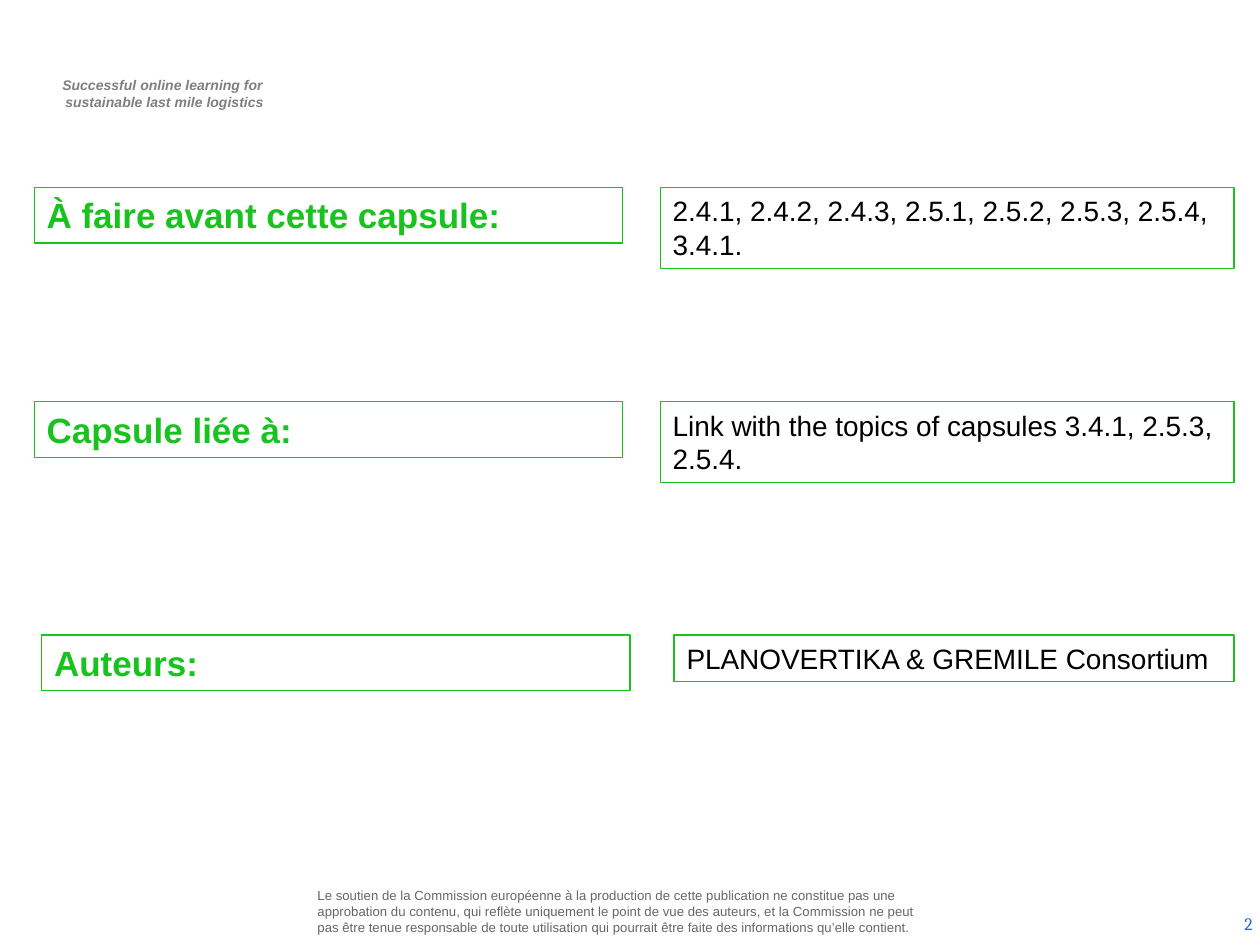
import pptx
import pptx.util
import pptx.dml.color
import pptx.enum.shapes
import pptx.enum.text

Cm, Pt = pptx.util.Cm, pptx.util.Pt
RGB = pptx.dml.color.RGBColor.from_string
ALIGN = pptx.enum.text.PP_ALIGN
ANCHOR = pptx.enum.text.MSO_ANCHOR
FIT = pptx.enum.text.MSO_AUTO_SIZE

# Colours and type styles
THEME = {
    "paper": RGB("FFFFFF"),
    "frame": RGB("18C320"),
    "tagline": {"name": "Arial", "size": Pt(8), "bold": True, "italic": True, "color": RGB("7F7F7F")},
    "disclaimer": {"name": "Arial", "size": Pt(7.5), "color": RGB("666666")},
    "page": {"name": "Cambria", "size": Pt(10), "color": RGB("3366CC")},
    "label": {"name": "Arial", "size": Pt(20), "bold": True, "color": RGB("18C320")},
    "answer": {"name": "Arial", "size": Pt(16), "color": RGB("000000")},
}


def write(holder, lines, style, align=ALIGN.LEFT, anchor=ANCHOR.TOP, fit=FIT.NONE, inset=(0.25, 0.13)):
    frame = holder.text_frame
    across, down = map(Cm, inset)
    layout = {"word_wrap": True, "auto_size": fit, "vertical_anchor": anchor,
              "margin_left": across, "margin_right": across,
              "margin_top": down, "margin_bottom": down}
    for key, value in layout.items():
        setattr(frame, key, value)
    frame.text = "\n".join(lines)
    for paragraph in frame.paragraphs:
        paragraph.alignment = align
        for run in paragraph.runs:
            for key, value in THEME[style].items():
                if key == "color":
                    run.font.color.rgb = value
                else:
                    setattr(run.font, key, value)


def framed(text, style, left, top, width, height):
    box = slide.shapes.add_shape(pptx.enum.shapes.MSO_SHAPE.RECTANGLE,
                                 Cm(left), Cm(top), Cm(width), Cm(height))
    box.shadow.inherit = False
    box.fill.solid()
    box.fill.fore_color.rgb = THEME["paper"]
    box.line.color.rgb = THEME["frame"]
    box.line.width = Pt(0.75)
    write(box, [text], style, fit=FIT.SHAPE_TO_FIT_TEXT)


deck = pptx.Presentation()
deck.slide_width, deck.slide_height = Cm(25.4), Cm(19.05)
slide = deck.slides.add_slide(deck.slide_layouts[6])

# Project tagline
tagline = slide.shapes.add_textbox(Cm(0.74), Cm(1.42), Cm(5.16), Cm(0.94))
write(tagline, ["Successful online learning for ", "sustainable last mile logistics"],
      "tagline", align=ALIGN.CENTER, fit=FIT.SHAPE_TO_FIT_TEXT)

# Funding disclaimer
disclaimer = slide.shapes.add_textbox(Cm(6.3), Cm(17.86), Cm(12.52), Cm(1.02))
write(disclaimer, [
    "Le soutien de la Commission européenne à la production de cette publication "
    "ne constitue pas une approbation du contenu, qui reflète uniquement le point "
    "de vue des auteurs, et la Commission ne peut pas être tenue responsable de "
    "toute utilisation qui pourrait être faite des informations qu’elle contient."],
    "disclaimer", anchor=ANCHOR.MIDDLE, inset=(0.1, 0.1))

# Page number
page_number = slide.shapes.add_textbox(Cm(19.58), Cm(18.11), Cm(5.92), Cm(1.02))
write(page_number, ["2"], "page", align=ALIGN.RIGHT, anchor=ANCHOR.MIDDLE)

# Capsule facts: label on the left, answer on the right, sharing a right edge
right_edge = 24.88
facts = [
    (3.78, 0.69, "À faire avant cette capsule:",
     13.31, 1.63, "2.4.1, 2.4.2, 2.4.3, 2.5.1, 2.5.2, 2.5.3, 2.5.4, 3.4.1."),
    (8.1, 0.69, "Capsule liée à:",
     13.31, 1.63, "Link with the topics of capsules 3.4.1, 2.5.3, 2.5.4."),
    (12.8, 0.84, "Auteurs:",
     13.59, 0.94, "PLANOVERTIKA & GREMILE Consortium"),
]
for top, label_left, label, answer_left, answer_height, answer in facts:
    framed(label, "label", label_left, top, 11.86, 1.12)
    framed(answer, "answer", answer_left, top, right_edge - answer_left, answer_height)

deck.save("out.pptx")
